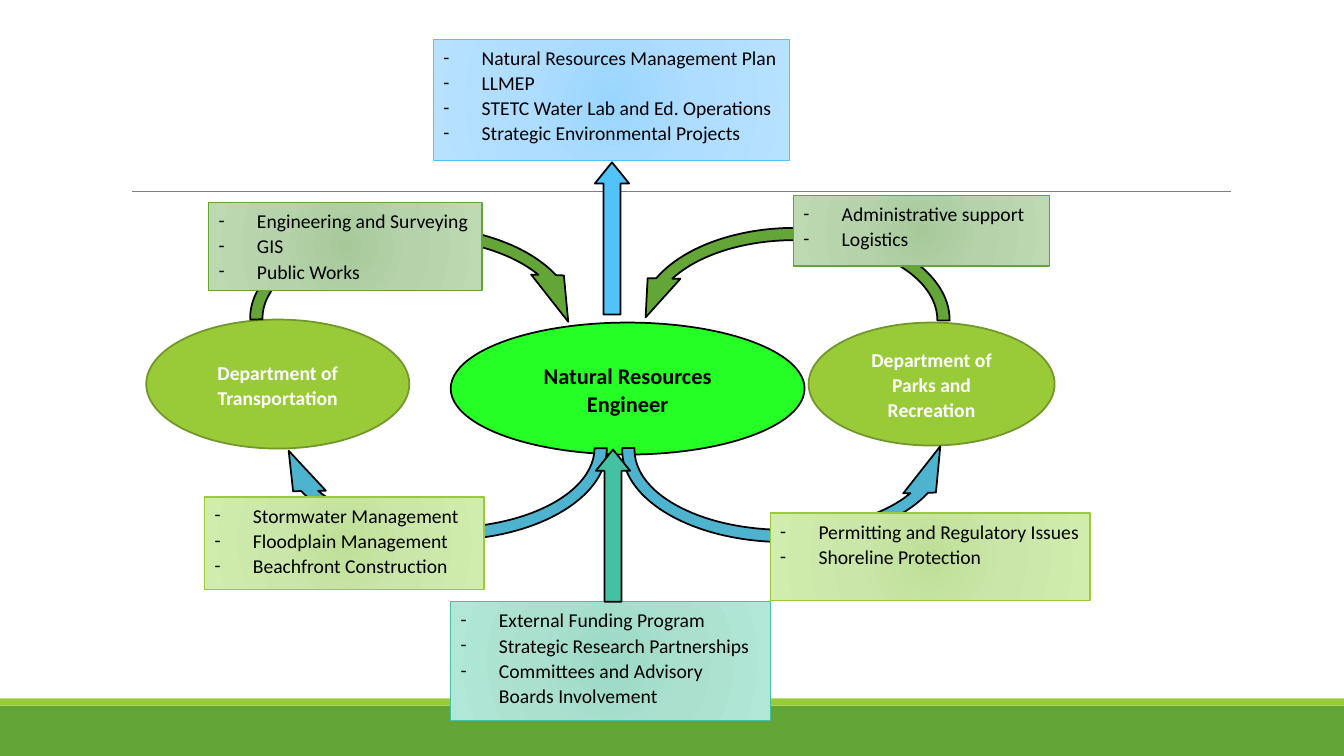
from dataclasses import dataclass

from pptx import Presentation
from pptx.dml.color import RGBColor
from pptx.enum.shapes import MSO_CONNECTOR, MSO_SHAPE
from pptx.enum.text import MSO_ANCHOR, PP_ALIGN
from pptx.oxml import parse_xml
from pptx.oxml.ns import nsdecls, qn
from pptx.util import Inches, Pt

WIDE, HIGH = Inches(13.33), Inches(7.5)
COLS, ROWS = 1333, 750


@dataclass(frozen=True)
class Theme:
    """Colours, type sizes and line widths of the slide."""
    font: str = "Calibri"
    white: str = "FFFFFF"
    black: str = "000000"
    grey: str = "808080"
    green: str = "63A537"
    lime: str = "99CB38"
    olive: str = "719629"
    neon: str = "25FF25"
    blue: str = "4EB3CF"
    sky: str = "51C3F9"
    teal: str = "44C1A3"
    moss_wash: tuple = ("A7C99A", "B5D2AA", "BCD9B1")
    lime_wash: tuple = ("BEDF97", "CAE6A9", "D0EDAE")
    teal_wash: tuple = ("9AD9C5", "ABE0CF", "B1E7D6")
    sky_wash: tuple = ("99D5FE", "AEDDFF", "B8E1FF")
    stops: tuple = (0, 45, 100)
    body: int = 14
    hub: int = 16
    edge: float = 1.25
    rim: float = 1
    hair: float = 0.5
    lead: float = 1.07
    gap: int = 8


THEME = Theme()


def col(n):
    """Turn grid columns into a length."""
    return round(WIDE * n / COLS)


def row(n):
    """Turn grid rows into a length."""
    return round(HIGH * n / ROWS)


def add_form(slide, kind, cell, fill, line=None, width=THEME.edge):
    """Add a preset shape with a flat or radial fill."""
    x, y, w, h = cell
    form = slide.shapes.add_shape(kind, col(x), row(y), col(w), row(h))
    form.shadow.inherit = False
    if isinstance(fill, tuple):
        add_wash(form, fill)
    else:
        form.fill.solid()
        form.fill.fore_color.rgb = RGBColor.from_string(fill)
    if line:
        form.line.color.rgb = RGBColor.from_string(line)
        form.line.width = Pt(width)
    else:
        form.line.fill.background()
    return form


def add_wash(form, hues):
    """Give a shape a circular gradient."""
    form.fill.background()
    stops = "".join(
        f'<a:gs pos="{at * 1000}"><a:srgbClr val="{hue}"/></a:gs>'
        for at, hue in zip(THEME.stops, hues))
    wash = parse_xml(
        f'<a:gradFill {nsdecls("a")} rotWithShape="1"><a:gsLst>{stops}</a:gsLst>'
        '<a:path path="circle"><a:fillToRect l="100000" t="100000" '
        'r="100000" b="100000"/></a:path></a:gradFill>')
    props = form.element.spPr
    props.replace(props.find(qn("a:noFill")), wash)


def add_text(para, text, size, hue, bold=False):
    """Add one styled run to a paragraph."""
    para.line_spacing = THEME.lead
    run = para.add_run()
    run.text = text
    run.font.name = THEME.font
    run.font.size = Pt(size)
    run.font.bold = bold
    run.font.color.rgb = RGBColor.from_string(hue)


def add_oval(slide, cell, text, fill, line, size, hue):
    """Add an ellipse with a bold centred name."""
    oval = add_form(slide, MSO_SHAPE.OVAL, cell, fill, line)
    frame = oval.text_frame
    frame.word_wrap = True
    frame.vertical_anchor = MSO_ANCHOR.MIDDLE
    para = frame.paragraphs[0]
    para.alignment = PP_ALIGN.CENTER
    para.space_after = Pt(THEME.gap)
    add_text(para, text, size, hue, True)


def add_dash(para):
    """Give a paragraph a dash and a hanging indent."""
    props = para._p.get_or_add_pPr()
    dent = Inches(0.38)
    props.set("marL", str(dent))
    props.set("indent", str(-dent))
    props.append(parse_xml(
        f'<a:buFont {nsdecls("a")} typeface="{THEME.font}"/>'))
    props.append(parse_xml(f'<a:buChar {nsdecls("a")} char="-"/>'))


def add_list(slide, cell, wash, line, items):
    """Add a box that holds a dashed list."""
    box = add_form(slide, MSO_SHAPE.RECTANGLE, cell, wash, line, THEME.rim)
    frame = box.text_frame
    frame.word_wrap = True
    frame.vertical_anchor = MSO_ANCHOR.TOP
    for i, item in enumerate(items):
        para = frame.add_paragraph() if i else frame.paragraphs[0]
        para.alignment = PP_ALIGN.LEFT
        para.space_after = Pt(THEME.gap if item == items[-1] else 0)
        add_text(para, item, THEME.body, THEME.black)
        add_dash(para)


def add_arc(slide, cell, fill, swing, start, flips=()):
    """Add a curved arrow, mirrored as asked."""
    arc = add_form(slide, MSO_SHAPE.CIRCULAR_ARROW, cell, fill, THEME.black)
    for i, value in enumerate((0.06, swing, 205.42, start, 0.08)):
        arc.adjustments[i] = value
    for flip in flips:
        arc.element.spPr.xfrm.set(flip, "1")


def add_rise(slide, x, y, fill):
    """Add a straight arrow that points up."""
    rise = add_form(slide, MSO_SHAPE.UP_ARROW, (x, y, 34, 151), fill, THEME.black)
    rise.adjustments[0] = 0.5
    rise.adjustments[1] = 0.62


def add_rule(slide, x, end, y):
    """Add the thin level line."""
    rule = slide.shapes.add_connector(
        MSO_CONNECTOR.STRAIGHT, col(x), row(y), col(end), row(y))
    rule.line.color.rgb = RGBColor.from_string(THEME.grey)
    rule.line.width = Pt(THEME.hair)
    rule.element.spPr.append(parse_xml(f'<a:effectLst {nsdecls("a")}/>'))


def main():
    """Build the slide and save it."""
    t = THEME
    deck = Presentation()
    deck.slide_width, deck.slide_height = WIDE, HIGH
    slide = deck.slides.add_slide(deck.slide_layouts[6])

    add_form(slide, MSO_SHAPE.RECTANGLE, (0, 700, COLS, 50), t.green)
    add_form(slide, MSO_SHAPE.RECTANGLE, (0, 693, COLS, 7), t.lime)
    add_rule(slide, 131, 1221, 190)

    add_oval(slide, (145, 317, 261, 128), "Department of Transportation",
             t.lime, t.olive, t.body, t.white)
    add_oval(slide, (447, 320, 351, 131), "Natural Resources Engineer",
             t.neon, t.black, t.hub, t.black)
    add_oval(slide, (802, 320, 244, 122), "Department of Parks and Recreation",
             t.lime, t.olive, t.body, t.white)

    add_arc(slide, (624, 216, 328, 203), t.green, 9.99, 107.9, ("flipH",))
    add_arc(slide, (607, 345, 342, 203), t.blue, 11.42, 107.57, ("flipV",))
    add_arc(slide, (238, 214, 342, 203), t.green, 11.42, 107.69)
    add_arc(slide, (270, 343, 342, 203), t.blue, 9.98, 108.04, ("flipH", "flipV"))

    add_list(slide, (207, 201, 271, 87), t.moss_wash, t.green,
             ("Engineering and Surveying", "GIS", "Public Works"))
    add_list(slide, (203, 493, 277, 92), t.lime_wash, t.lime,
             ("Stormwater Management", "Floodplain Management",
              "Beachfront Construction"))
    add_list(slide, (787, 194, 254, 70), t.moss_wash, t.green,
             ("Administrative support", "Logistics"))
    add_list(slide, (764, 509, 317, 87), t.lime_wash, t.lime,
             ("Permitting and Regulatory Issues", "Shoreline Protection"))
    add_list(slide, (447, 597, 317, 118), t.teal_wash, t.teal,
             ("External Funding Program", "Strategic Research Partnerships",
              "Committees and Advisory Boards Involvement"))
    add_list(slide, (430, 39, 353, 120), t.sky_wash, t.sky,
             ("Natural Resources Management Plan", "LLMEP",
              "STETC Water Lab and Ed. Operations",
              "Strategic Environmental Projects"))

    add_rise(slide, 591, 446, t.teal)
    add_rise(slide, 590, 161, t.sky)
    deck.save("out.pptx")


if __name__ == "__main__":
    main()
